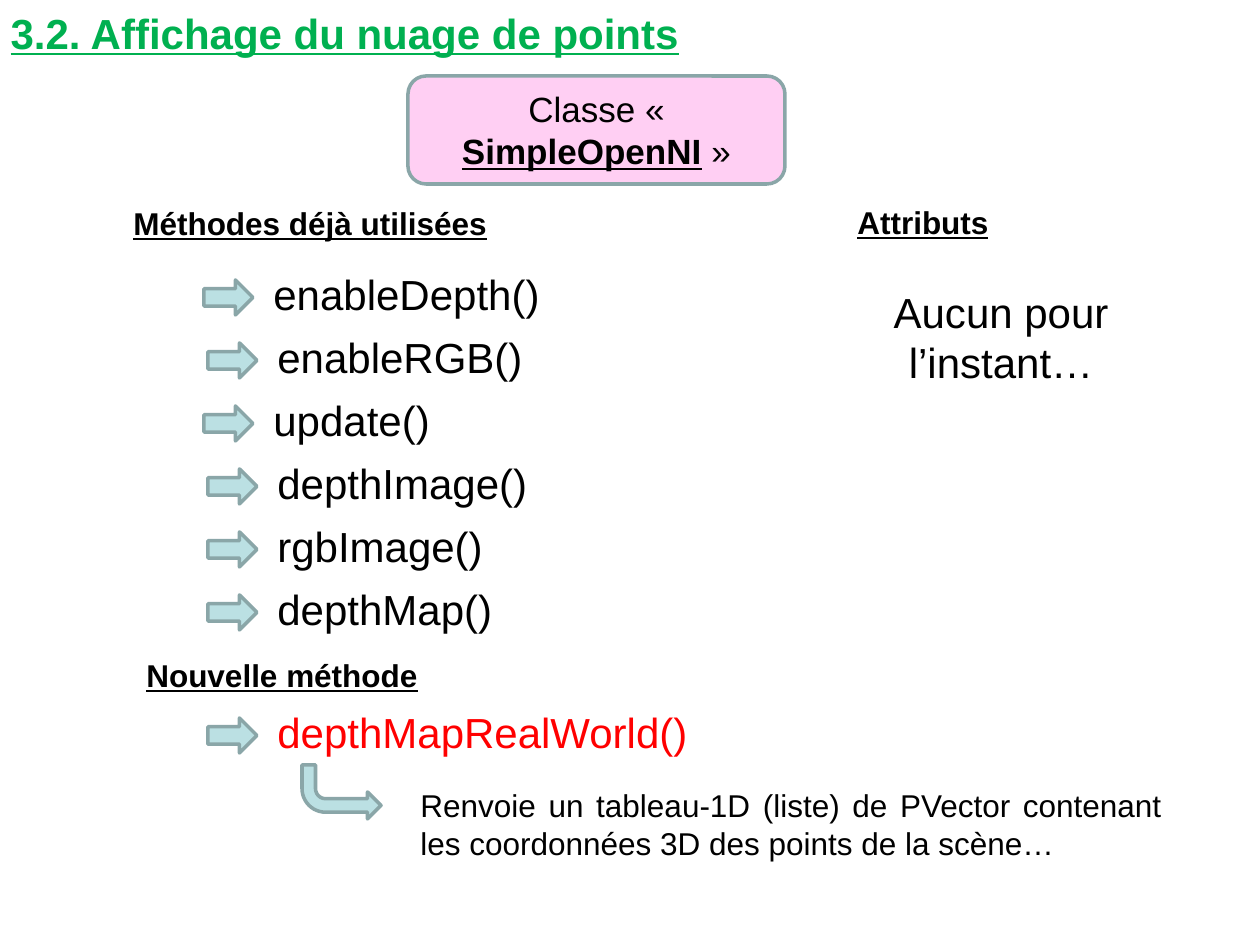
from pptx import Presentation
from pptx.dml.color import RGBColor
from pptx.enum.shapes import MSO_SHAPE
from pptx.enum.text import MSO_ANCHOR, MSO_AUTO_SIZE, PP_ALIGN
from pptx.oxml.ns import qn
from pptx.oxml.xmlchemy import OxmlElement
from pptx.util import Emu, Pt

RIGHT_ARROW = MSO_SHAPE.RIGHT_ARROW
BENT_ARROW = MSO_SHAPE.BENT_ARROW
ROUNDED = MSO_SHAPE.ROUNDED_RECTANGLE
LEFT, CENTER, JUSTIFY = PP_ALIGN.LEFT, PP_ALIGN.CENTER, PP_ALIGN.JUSTIFY
TOP, MIDDLE = MSO_ANCHOR.TOP, MSO_ANCHOR.MIDDLE
GROW = MSO_AUTO_SIZE.SHAPE_TO_FIT_TEXT
TITLE_ONLY = 5

EMU_PER_PX = 914400 / 126
BLACK, RED, GREEN = "000000", "FF0000", "00B050"
PINK, PALE_BLUE, OUTLINE = "FF33CC", "BBE0E3", "8AA6A8"
HEADING = {"size": Pt(18), "bold": True, "underline": True}
BODY = {"size": Pt(18)}
LARGE = {"size": Pt(24)}

METHODS = [  # name and indent
    ("enableDepth()", 0),
    ("enableRGB()", 4),
    ("update()", 0),
    ("depthImage()", 4),
    ("rgbImage()", 4),
    ("depthMap()", 4),
]
ROW_PITCH = 63


def px(length):
    return Emu(round(length * EMU_PER_PX))


def color(hex_string):
    return RGBColor.from_string(hex_string)


def add_run(paragraph, text, formats, hex_color=BLACK):
    run = paragraph.add_run()
    run.text = text
    for name, value in {"name": "Arial", **formats}.items():
        setattr(run.font, name, value)
    run.font.color.rgb = color(hex_color)


def add_text(slide, box, text, formats, hex_color=BLACK, align=LEFT, wrap=True):
    shape = slide.shapes.add_textbox(*map(px, box))
    frame = shape.text_frame
    frame.word_wrap = wrap
    frame.auto_size = GROW
    paragraph = frame.paragraphs[0]
    paragraph.alignment = align
    add_run(paragraph, text, formats, hex_color)


def add_outlined_shape(slide, kind, box, fill):
    shape = slide.shapes.add_shape(kind, *map(px, box))
    shape.shadow.inherit = False
    shape.fill.solid()
    shape.fill.fore_color.rgb = color(fill)
    shape.line.color.rgb = color(OUTLINE)
    shape.line.width = Pt(2)
    return shape


def set_title(slide, box, text):
    title = slide.shapes.title
    title.left, title.top, title.width, title.height = map(px, box)
    frame = title.text_frame
    frame.word_wrap = True
    frame.auto_size = GROW
    frame.vertical_anchor = TOP
    paragraph = frame.paragraphs[0]
    paragraph.alignment = LEFT
    add_run(paragraph, text, {**HEADING, "size": Pt(24)}, GREEN)


def add_class_box(slide, box):
    shape = add_outlined_shape(slide, ROUNDED, box, PINK)
    alpha = OxmlElement("a:alpha")
    alpha.set("val", "23000")
    shape.fill._xPr.find(qn("a:solidFill"))[0].append(alpha)
    frame = shape.text_frame
    frame.word_wrap = True
    frame.vertical_anchor = MIDDLE
    paragraph = frame.paragraphs[0]
    paragraph.alignment = CENTER
    plain = {"size": Pt(20)}
    add_run(paragraph, "Classe « ", plain)
    add_run(paragraph, "SimpleOpenNI", {**plain, "bold": True, "underline": True})
    add_run(paragraph, " »", plain)


def add_method(slide, left, top, width, name, hex_color=BLACK):
    """Arrow followed by the name of a method."""
    add_outlined_shape(slide, RIGHT_ARROW, (left, top + 18, 49, 35), PALE_BLUE)
    add_text(slide, (left + 57, top, width, 63), name, LARGE, hex_color, JUSTIFY)


def add_known_methods(slide, left, top):
    add_text(slide, (left, top, 412, 50), "Méthodes déjà utilisées", HEADING)
    for row, (name, indent) in enumerate(METHODS):
        add_method(slide, left + 83 + indent, top + 64 + row * ROW_PITCH, 344, name)


def add_attributes(slide, left, top):
    add_text(slide, (left + 16, top, 158, 50), "Attributs", HEADING, wrap=False)
    add_text(slide, (left, top + 83, 344, 115), "Aucun pour l’instant…", LARGE,
             align=CENTER)


def add_new_method(slide, left, top):
    add_text(slide, (left, top, 300, 50), "Nouvelle méthode", HEADING, wrap=False)
    add_method(slide, left + 74, top + 50, 522, "depthMapRealWorld()", RED)
    # Bent arrow leading to the explanation
    arrow = add_outlined_shape(slide, BENT_ARROW, (left + 168, top + 115, 79, 54),
                               PALE_BLUE)
    arrow._element.spPr.find(qn("a:xfrm")).set("flipV", "1")
    add_text(slide, (left + 274, top + 130, 766, 89),
             "Renvoie un tableau-1D (liste) de PVector contenant "
             "les coordonnées 3D des points de la scène…", BODY, align=JUSTIFY)


def main():
    presentation = Presentation()
    presentation.slide_width, presentation.slide_height = px(1260), px(945)
    slide = presentation.slides.add_slide(presentation.slide_layouts[TITLE_ONLY])
    set_title(slide, (-2, 1, 1251, 63), "3.2. Affichage du nuage de points")
    add_class_box(slide, (408, 76, 377, 108))
    add_known_methods(slide, 121, 198)
    add_attributes(slide, 829, 197)
    add_new_method(slide, 134, 650)
    presentation.save("out.pptx")


if __name__ == "__main__":
    main()
